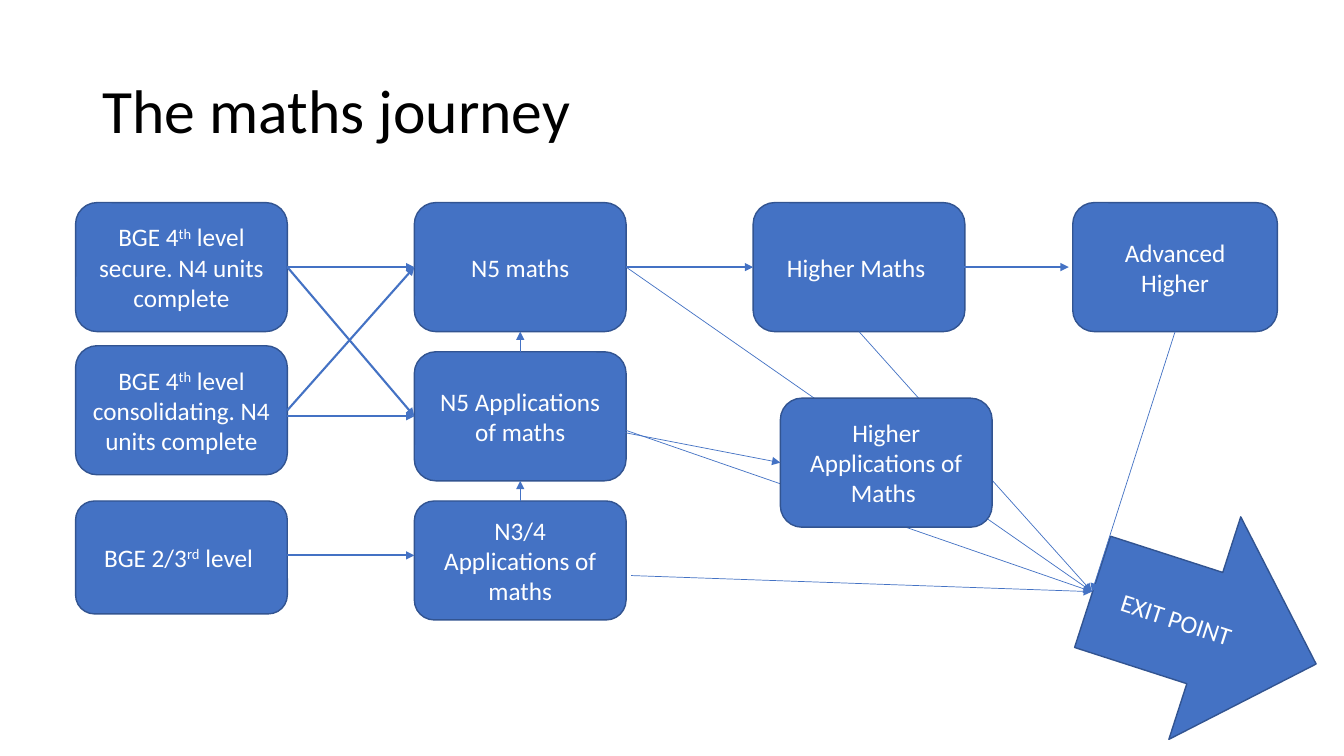
from dataclasses import dataclass
from typing import NamedTuple

from lxml.etree import SubElement
from pptx import Presentation
from pptx.dml.color import RGBColor as Rgb
from pptx.enum.shapes import MSO_CONNECTOR as Wire, MSO_SHAPE as Form
from pptx.enum.text import MSO_ANCHOR as Anchor, PP_ALIGN as Align
from pptx.oxml.ns import qn
from pptx.shapes.autoshape import Shape
from pptx.shapes.connector import Connector
from pptx.slide import Slide
from pptx.text.text import _Paragraph as Para
from pptx.util import Inches, Pt

HUES = {"fill": "4472C4", "edge": "325491", "light": "FFFFFF", "dark": "000000"}
FONT = "Calibri"
TOP, LEFT, BOTTOM, RIGHT = range(4)
THICK, THIN = 1.5, 0.5
WIDE, TALL = 2.1, 1.28


@dataclass
class Box:
    key: str
    x: float
    y: float
    texts: tuple[str, ...]
    w: float = WIDE
    h: float = TALL
    form: Form = Form.FLOWCHART_ALTERNATE_PROCESS
    turn: float = 0


class Spot(NamedTuple):
    x: float
    y: float


class Side(NamedTuple):
    key: str
    site: int


@dataclass
class Link:
    start: Spot | Side
    end: Spot | Side
    width: float = THIN


EXIT = Spot(10.83, 5.87)

BOXES = [
    Box("secure", 0.75, 2.01, ("BGE 4", "th", " level secure. N4 units complete")),
    Box("steady", 0.75, 3.43, ("BGE 4", "th", " level consolidating. N4 units complete")),
    Box("early", 0.75, 4.97, ("BGE 2/3", "rd", " level "), h=1.12),
    Box("n5", 4.11, 2.01, ("N5 maths",)),
    Box("n5 apps", 4.11, 3.49, ("N5 Applications of maths",)),
    Box("n3 apps", 4.11, 4.97, ("N3/4 Applications of maths",), h=1.18),
    Box("higher", 7.47, 2.01, ("Higher Maths ",)),
    Box("top", 10.64, 2.01, ("Advanced Higher",), w=2.03),
    Box("exit", 10.78, 5.07, ("EXIT POINT",), 2.33, 2.32, Form.RIGHT_ARROW, 17.9),
]
FRONT = Box("higher apps", 7.74, 3.95, ("Higher Applications of Maths ",))

LINKS = [
    Link(Side("secure", RIGHT), Side("n5", LEFT), THICK),
    Link(Side("secure", RIGHT), Side("n5 apps", LEFT), THICK),
    Link(Side("steady", RIGHT), Side("n5", LEFT), THICK),
    Link(Spot(2.85, 4.13), Side("n5 apps", LEFT), THICK),
    Link(Spot(2.85, 5.51), Spot(4.11, 5.51), THICK),
    Link(Side("n5", RIGHT), Side("higher", LEFT), THICK),
    Link(Spot(9.39, 2.65), Spot(10.6, 2.65), THICK),
    Link(Side("n5 apps", TOP), Side("n5", BOTTOM)),
    Link(Side("n3 apps", TOP), Side("n5 apps", BOTTOM)),
    Link(Spot(6.26, 5.71), EXIT),
    Link(Spot(6.21, 4.27), EXIT),
    Link(Side("n5", RIGHT), EXIT),
    Link(Side("higher", BOTTOM), EXIT),
    Link(Side("top", BOTTOM), EXIT),
]
LAST = Link(Spot(6.03, 4.26), Side("higher apps", LEFT))


def hue(key: str) -> Rgb:
    return Rgb.from_string(HUES[key])


def add_runs(para: Para, texts: tuple[str, ...], size: float, key: str) -> None:
    for i, text in enumerate(texts):
        run = para.add_run()
        run.text = text
        run.font.name = FONT
        run.font.size = Pt(size)
        run.font.color.rgb = hue(key)
        if i % 2:
            run.font._element.set("baseline", "30000")


def add_title(slide: Slide, text: str) -> None:
    area = slide.shapes.add_textbox(*map(Inches, (0.92, 0.4, 11.5, 1.45)))
    frame = area.text_frame
    frame.word_wrap = True
    frame.vertical_anchor = Anchor.MIDDLE
    para = frame.paragraphs[0]
    para.line_spacing = 0.9
    add_runs(para, (text,), 44, "dark")


def add_box(slide: Slide, box: Box) -> Shape:
    shape = slide.shapes.add_shape(
        box.form, *map(Inches, (box.x, box.y, box.w, box.h)))
    shape.rotation = box.turn
    shape.shadow.inherit = False
    shape.fill.solid()
    shape.fill.fore_color.rgb = hue("fill")
    shape.line.color.rgb = hue("edge")
    shape.line.width = Pt(1)
    frame = shape.text_frame
    frame.word_wrap = True
    frame.vertical_anchor = Anchor.MIDDLE
    para = frame.paragraphs[0]
    para.alignment = Align.CENTER
    add_runs(para, box.texts, 18, "light")
    return shape


def add_link(slide: Slide, link: Link, shapes: dict[str, Shape]) -> Connector:
    ends = [end if isinstance(end, Spot) else Spot(0, 0)
            for end in (link.start, link.end)]
    wire = slide.shapes.add_connector(
        Wire.STRAIGHT, *(Inches(v) for end in ends for v in end))
    if isinstance(link.start, Side):
        wire.begin_connect(shapes[link.start.key], link.start.site)
    if isinstance(link.end, Side):
        wire.end_connect(shapes[link.end.key], link.end.site)
    wire.line.color.rgb = hue("fill")
    wire.line.width = Pt(link.width)
    SubElement(wire.line._get_or_add_ln(), qn("a:tailEnd"), type="triangle")
    SubElement(wire._element.spPr, qn("a:effectLst"))
    return wire


def main() -> None:
    deck = Presentation()
    deck.slide_width, deck.slide_height = Inches(13.33), Inches(7.5)
    slide = deck.slides.add_slide(deck.slide_layouts[6])
    add_title(slide, "The maths journey")
    shapes = {box.key: add_box(slide, box) for box in BOXES}
    for link in LINKS:
        add_link(slide, link, shapes)
    shapes[FRONT.key] = add_box(slide, FRONT)
    add_link(slide, LAST, shapes)
    deck.save("out.pptx")


if __name__ == "__main__":
    main()
